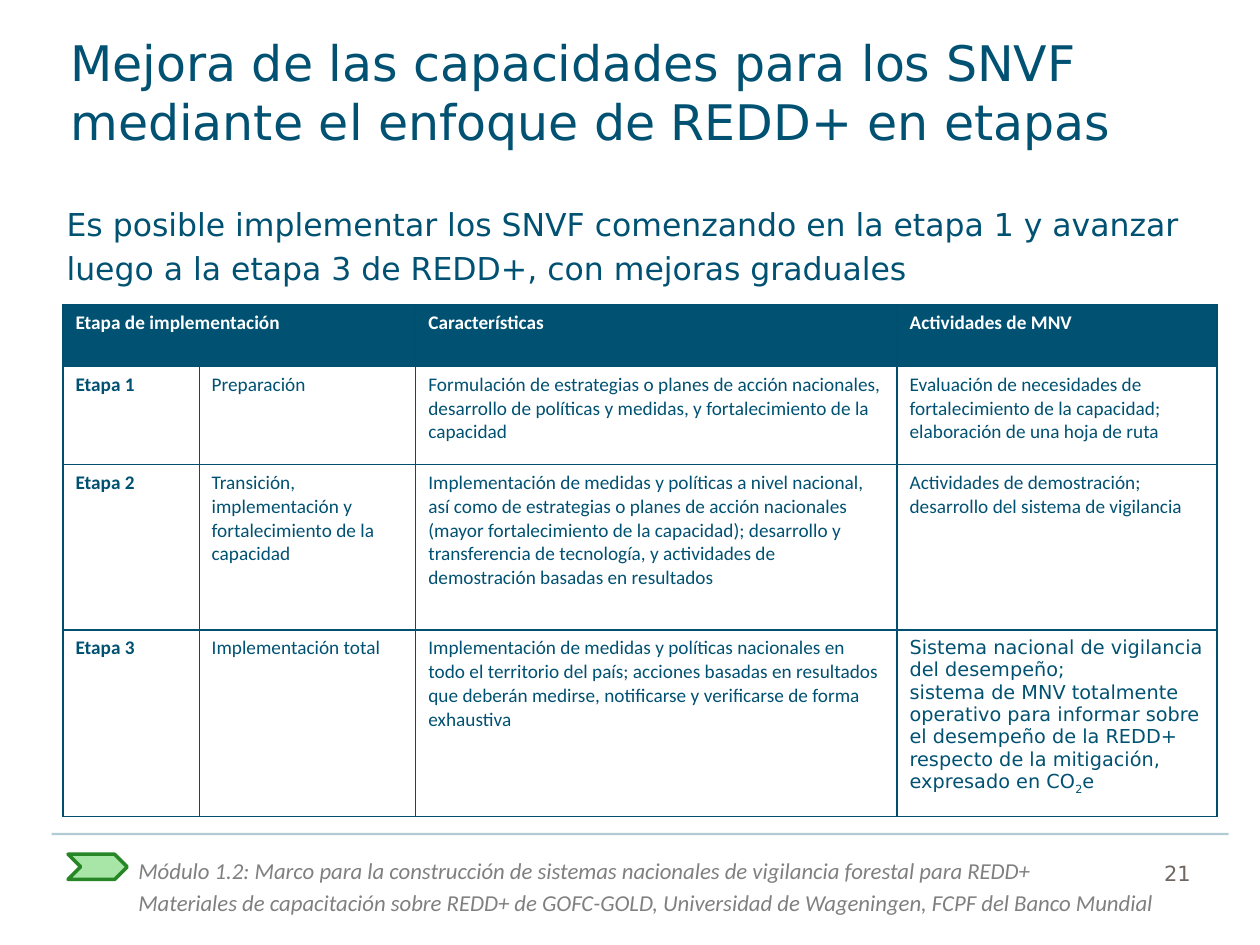
import pptx
import pptx.dml.color
import pptx.enum.shapes
import pptx.enum.text
import pptx.oxml
import pptx.oxml.ns
import pptx.util
from dataclasses import dataclass

Inches = pptx.util.Inches
Pt = pptx.util.Pt


def rgb(value):
    return pptx.dml.color.RGBColor.from_string(value)


@dataclass(frozen=True)
class Theme:
    navy: str = "005172"
    border: str = "004F6F"
    white: str = "FFFFFF"
    footer: str = "808080"
    number: str = "706762"
    arrow_fill: str = "A8E6A8"
    arrow_line: str = "278626"
    sans: str = "DejaVu Sans"
    calibri: str = "Calibri"
    title_size: int = 28
    lead_size: int = 18
    footer_size: int = 13
    number_size: int = 12
    table_size: int = 11


THEME = Theme()

HEADERS = ["Etapa de implementación", "", "Características", "Actividades de MNV"]
STAGES = [
    ["Etapa 1", "Preparación",
     "Formulación de estrategias o planes de acción nacionales, desarrollo de "
     "políticas y medidas, y fortalecimiento de la capacidad",
     "Evaluación de necesidades de fortalecimiento de la capacidad; "
     "elaboración de una hoja de ruta"],
    ["Etapa 2", "Transición, implementación y fortalecimiento de la capacidad",
     "Implementación de medidas y políticas a nivel nacional, así como de "
     "estrategias o planes de acción nacionales (mayor fortalecimiento de la "
     "capacidad); desarrollo y transferencia de tecnología, y actividades de "
     "demostración basadas en resultados",
     "Actividades de demostración; desarrollo del sistema de vigilancia"],
    ["Etapa 3", "Implementación total",
     "Implementación de medidas y políticas nacionales en todo el territorio "
     "del país; acciones basadas en resultados que deberán medirse, "
     "notificarse y verificarse de forma exhaustiva",
     "Sistema nacional de vigilancia del desempeño;\v"
     "sistema de MNV totalmente operativo para informar sobre el desempeño de "
     "la REDD+ respecto de la mitigación, expresado en CO"],
]
COLUMN_WIDTHS = [1.08, 1.72, 3.82, 2.54]
ROW_HEIGHTS = [0.49, 0.78, 1.31, 1.48]


def style(paragraph, font, size, color, bold=False, italic=False):
    paragraph.font.name = font
    paragraph.font.size = Pt(size)
    paragraph.font.color.rgb = rgb(color)
    paragraph.font.bold = bold
    paragraph.font.italic = italic


def add_text(slide, box, lines, font, size, color, spacing=None, italic=False):
    frame = slide.shapes.add_textbox(*map(Inches, box)).text_frame
    frame.word_wrap = True
    frame.text = "\n".join(lines)
    for paragraph in frame.paragraphs:
        style(paragraph, font, size, color, italic=italic)
        if spacing:
            paragraph.line_spacing = Pt(spacing)
    return frame


def add_title(slide, box):
    title = add_text(
        slide, box,
        ["Mejora de las capacidades para los SNVF mediante el enfoque de REDD+ en etapas"],
        THEME.sans, THEME.title_size, THEME.navy)
    title.margin_left, title.margin_top = Inches(0.02), Inches(0)
    title.margin_right, title.margin_bottom = Inches(0.1), Inches(0.35)
    title.vertical_anchor = pptx.enum.text.MSO_ANCHOR.MIDDLE


def add_lead(slide, box):
    add_text(
        slide, box,
        ["Es posible implementar los SNVF comenzando en la etapa 1 y avanzar luego "
         "a la etapa 3 de REDD+, con mejoras graduales"],
        THEME.sans, THEME.lead_size, THEME.navy, spacing=25)


def add_borders(cell):
    properties = cell._tc.get_or_add_tcPr()
    for index, side in enumerate(("lnL", "lnR", "lnT", "lnB")):
        properties.insert(index, pptx.oxml.parse_xml(
            f'<a:{side} {pptx.oxml.ns.nsdecls("a")} w="{Pt(0.75)}"><a:solidFill>'
            f'<a:srgbClr val="{THEME.border}"/></a:solidFill></a:{side}>'))


def add_stage_table(slide, box):
    rows = [HEADERS] + STAGES
    table = slide.shapes.add_table(
        len(rows), len(HEADERS), *map(Inches, box)).table
    table.horz_banding = False
    for column, width in zip(table.columns, COLUMN_WIDTHS):
        column.width = Inches(width)
    for row, height in zip(table.rows, ROW_HEIGHTS):
        row.height = Inches(height)
    for r, texts in enumerate(rows):
        header = r == 0
        for c, text in enumerate(texts):
            cell = table.cell(r, c)
            cell.text = text
            cell.fill.solid()
            cell.fill.fore_color.rgb = rgb(THEME.navy if header else THEME.white)
            add_borders(cell)
            style(cell.text_frame.paragraphs[0], THEME.calibri, THEME.table_size,
                  THEME.white if header else THEME.navy, bold=header or c == 0)
    table.cell(0, 0).merge(table.cell(0, 1))

    performance = table.cell(len(STAGES), len(HEADERS) - 1).text_frame.paragraphs[0]
    performance.font.name = THEME.sans
    subscript = performance.add_run()
    subscript.text = "2"
    subscript.font._element.set("baseline", "-25000")
    performance.add_run().text = "e"


def add_footer(slide, box):
    left, top, width, _ = box
    rule = slide.shapes.add_connector(
        pptx.enum.shapes.MSO_CONNECTOR.STRAIGHT,
        Inches(left), Inches(top), Inches(left + width), Inches(top))
    rule.line.color.rgb = rgb(THEME.navy)
    rule.line.width = Pt(1.25)
    namespace = pptx.oxml.ns.nsdecls("a")
    rule_color = rule.line._ln.find(".//" + pptx.oxml.ns.qn("a:srgbClr"))
    rule_color.append(pptx.oxml.parse_xml(f'<a:alpha {namespace} val="30000"/>'))
    rule._element.spPr.append(pptx.oxml.parse_xml(f"<a:effectLst {namespace}/>"))

    arrow = slide.shapes.add_shape(
        pptx.enum.shapes.MSO_SHAPE.CHEVRON,
        Inches(left + 0.13), Inches(top + 0.16), Inches(0.47), Inches(0.2))
    arrow.shadow.inherit = False
    arrow.fill.solid()
    arrow.fill.fore_color.rgb = rgb(THEME.arrow_fill)
    arrow.line.color.rgb = rgb(THEME.arrow_line)
    arrow.line.width = Pt(2)

    add_text(
        slide, (left + 0.59, top + 0.1, 8.64, 0.61),
        ["Módulo 1.2: Marco para la construcción de sistemas nacionales de "
         "vigilancia forestal para REDD+",
         "Materiales de capacitación sobre REDD+ de GOFC-GOLD, Universidad de "
         "Wageningen, FCPF del Banco Mundial"],
        THEME.calibri, THEME.footer_size, THEME.footer, spacing=18, italic=True)
    add_text(slide, (left + width - 0.61, top + 0.11, 0.61, 0.33), ["21"],
             THEME.sans, THEME.number_size, THEME.number, spacing=18)


def main():
    presentation = pptx.Presentation()
    presentation.slide_width = Inches(10)
    presentation.slide_height = Inches(7.5)
    slide = presentation.slides.add_slide(presentation.slide_layouts[6])
    add_footer(slide, (0.41, 6.62, 9.34, 0.71))
    add_title(slide, (0.54, 0.25, 9.23, 1.3))
    add_lead(slide, (0.43, 1.53, 9.32, 5.15))
    add_stage_table(slide, (0.5, 2.42, sum(COLUMN_WIDTHS), sum(ROW_HEIGHTS)))
    presentation.save("out.pptx")


if __name__ == "__main__":
    main()
